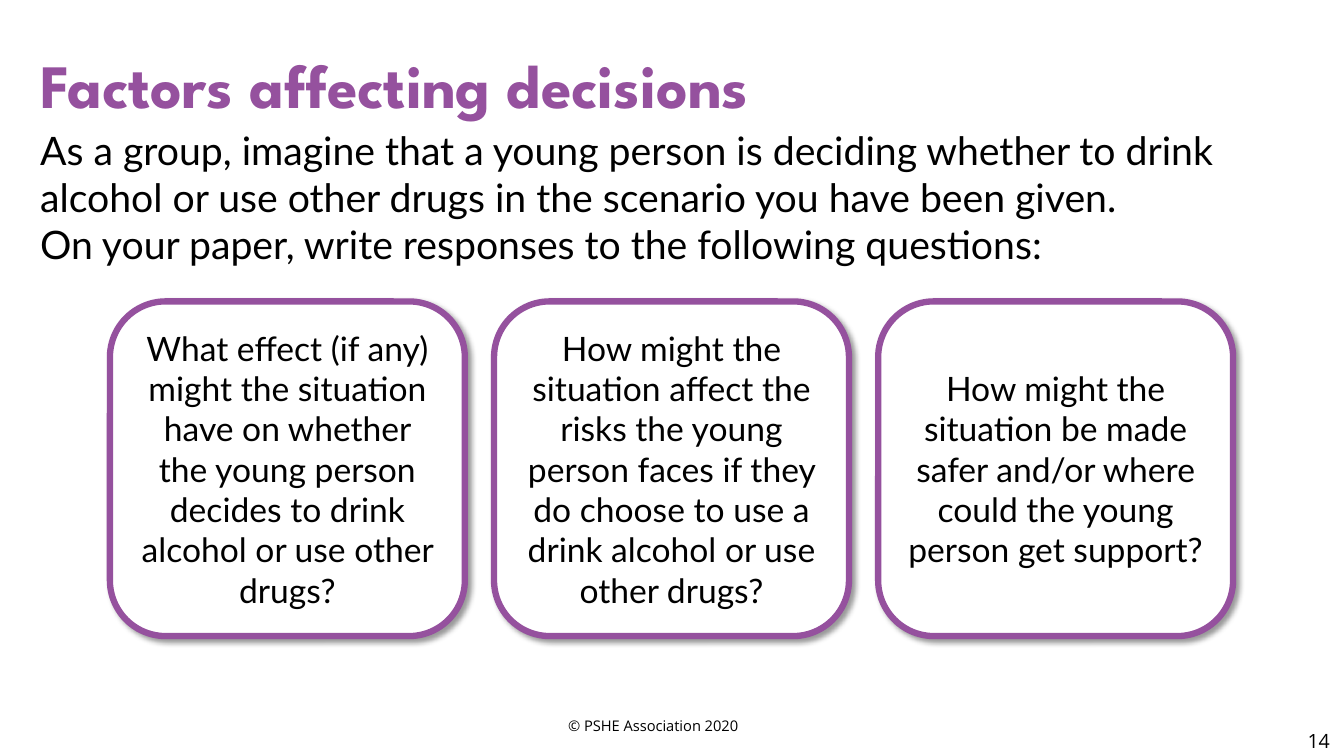
from lxml.etree import SubElement
from pptx import Presentation
from pptx.dml.color import RGBColor
from pptx.enum.shapes import MSO_SHAPE
from pptx.enum.text import MSO_ANCHOR, PP_ALIGN
from pptx.oxml.ns import qn
from pptx.util import Inches, Pt

COLORS = {"purple": "95519E", "text": "000000", "card": "FFFFFF"}


class Deck:
    """Holds the style and the current slide."""

    def __init__(self, prs):
        self.slide = prs.slides.add_slide(prs.slide_layouts[5])

    def color(self, name):
        return RGBColor.from_string(COLORS[name])

    def place(self, sp, box):
        sp.left, sp.top, sp.width, sp.height = [Inches(v) for v in box]

    def fill_text(self, sp, lines, font, size, color="text", bold=False,
                  align=PP_ALIGN.LEFT, anchor=MSO_ANCHOR.TOP):
        tf = sp.text_frame
        tf.word_wrap = True
        tf.vertical_anchor = anchor
        p = tf.paragraphs[0]
        p.alignment = align
        for i, line in enumerate(lines):
            if i:
                p.add_line_break()
            r = p.add_run()
            r.text = line
            r.font.name, r.font.size, r.font.bold = font, Pt(size), bold
            r.font.color.rgb = self.color(color)

    def title(self, text, box):
        sp = self.slide.shapes.title
        self.place(sp, box)
        self.fill_text(sp, [text], "League Spartan", 44, "purple", bold=True)

    def text(self, lines, box, font, size, **style):
        sp = self.slide.shapes.add_textbox(*[Inches(v) for v in box])
        self.fill_text(sp, lines, font, size, **style)

    def card(self, text, box):
        sp = self.slide.shapes.add_shape(
            MSO_SHAPE.ROUNDED_RECTANGLE, *[Inches(v) for v in box])
        sp.fill.solid()
        sp.fill.fore_color.rgb = self.color("card")
        sp.line.color.rgb = self.color("purple")
        sp.line.width = Pt(4.5)
        self.shadow(sp)
        self.fill_text(sp, [text], "Lato", 24, align=PP_ALIGN.CENTER,
                       anchor=MSO_ANCHOR.MIDDLE)

    def shadow(self, sp):
        sp.shadow.inherit = False
        effects = sp.element.spPr.find(qn("a:effectLst"))
        outer = SubElement(effects, qn("a:outerShdw"), blurRad=str(Pt(4)),
                           dist=str(Pt(3)), dir=str(45 * 60000),
                           algn="tl", rotWithShape="0")
        clr = SubElement(outer, qn("a:srgbClr"), val=COLORS["text"])
        SubElement(clr, qn("a:alpha"), val="40000")


def main():
    prs = Presentation()
    prs.slide_width, prs.slide_height = Inches(13.33), Inches(7.5)
    deck = Deck(prs)

    # Title and task
    deck.title("Factors affecting decisions", (0.3, 0.42, 11.72, 0.84))
    deck.text(["As a group, imagine that a young person is deciding whether to "
               "drink alcohol or use other drugs in the scenario you have been "
               "given.",
               "On your paper, write responses to the following questions:"],
              (0.3, 1.2, 12.57, 1.51), "Lato", 28)

    # Question cards
    questions = [
        "What effect (if any) might the situation have on whether the young "
        "person decides to drink alcohol or use other drugs?",
        "How might the situation affect the risks the young person faces if "
        "they do choose to use a drink alcohol or use other drugs?",
        "How might the situation be made safer and/or where could the young "
        "person get support?",
    ]
    left, width, gap = 1.09, 3.52, 0.29
    for i, question in enumerate(questions):
        deck.card(question, (left + i * (width + gap), 2.99, width, 3.32))

    # Footer and slide number
    deck.text(["© PSHE Association 2020"], (0, 7, 12.96, 0.4), "Open Sans",
              10.5, align=PP_ALIGN.CENTER, anchor=MSO_ANCHOR.MIDDLE)
    deck.text(["14"], (12.87, 7.18, 0.46, 0.4), "Open Sans", 14)

    prs.save("out.pptx")


if __name__ == "__main__":
    main()
